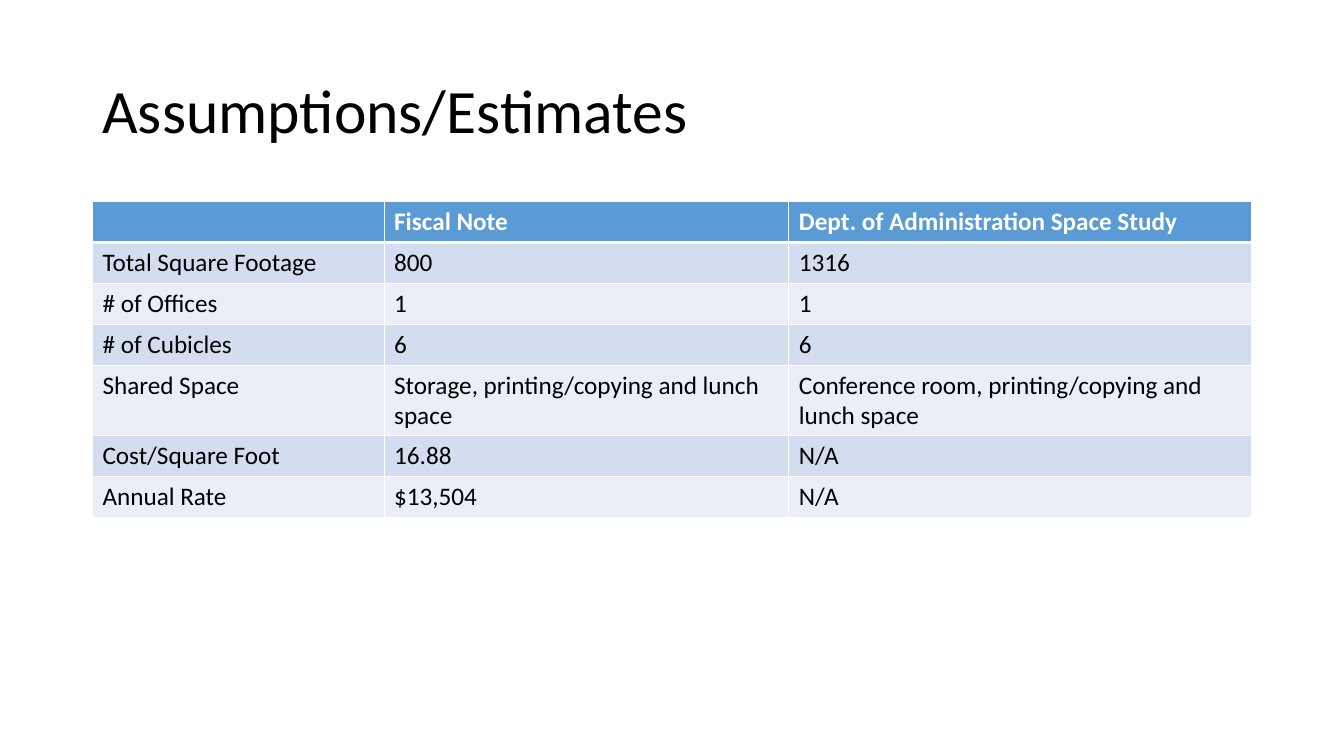
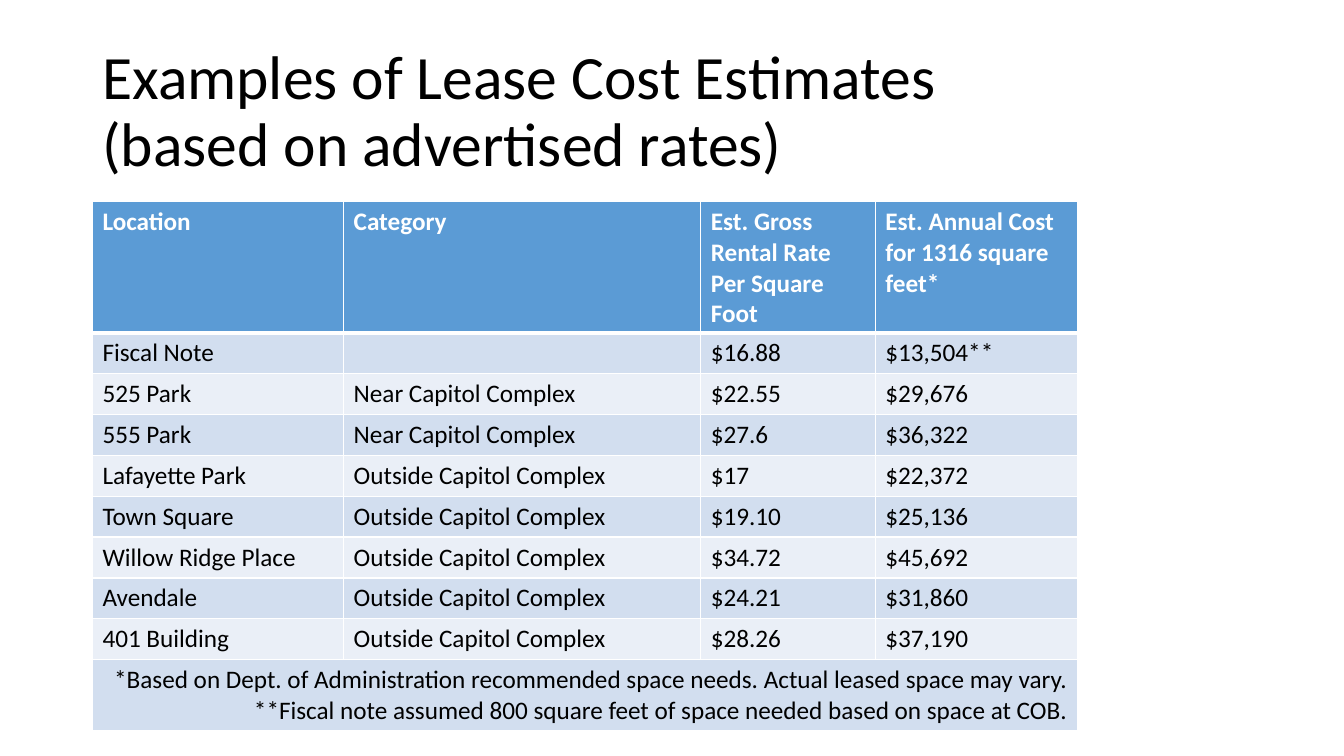
from lxml.etree import SubElement as Sub
from pptx import Presentation
from pptx.dml.color import RGBColor as RGB
from pptx.enum.text import MSO_ANCHOR as Anchor, PP_ALIGN as Align
from pptx.oxml.ns import qn
from pptx.util import Cm, Pt

COLORS = {"text": "000000", "white": "FFFFFF", "head": "5B9BD5",
          "odd": "D2DEEF", "even": "EAEFF7"}
FONTS = {
    "title": {"name": "Calibri", "size": Pt(44), "bold": False},
    "head": {"name": "Calibri", "size": Pt(18), "bold": True},
    "body": {"name": "Calibri", "size": Pt(18), "bold": False},
}
LEFT, TOP, WIDTH, ROW = 2.33, 5.08, 29.21, 1.03


class Deck:
    """Holds the shared style and the current slide."""

    def __init__(self):
        self.prs = Presentation()
        self.prs.slide_width, self.prs.slide_height = Cm(33.87), Cm(19.05)
        self.slide = None

    def label(self, frame, text, style, color, align=Align.LEFT):
        frame.text = text
        for para in frame.paragraphs:
            para.alignment = align
            for run in para.runs:
                for key, value in FONTS[style].items():
                    setattr(run.font, key, value)
                run.font.color.rgb = RGB.from_string(COLORS[color])

    def page(self, title):
        self.slide = self.prs.slides.add_slide(self.prs.slide_layouts[6])
        box = self.slide.shapes.add_textbox(Cm(LEFT), Cm(1.01), Cm(WIDTH), Cm(3.68))
        frame = box.text_frame
        frame.word_wrap = True
        frame.vertical_anchor = Anchor.MIDDLE
        self.label(frame, title, "title", "text")
        for para in frame.paragraphs:
            para.line_spacing = 0.9

    def border(self, cell, row):
        props = cell._tc.get_or_add_tcPr()
        widths = {"L": 1, "R": 1, "T": 3 if row == 1 else 1, "B": 3 if row == 0 else 1}
        for side, width in widths.items():
            line = Sub(props, qn(f"a:ln{side}"), w=str(Pt(width)))
            fill = Sub(line, qn("a:solidFill"))
            Sub(fill, qn("a:srgbClr"), val=COLORS["white"])

    def table(self, widths, rows, note=None):
        count = len(rows) + bool(note)
        grid = self.slide.shapes.add_table(
            count, len(widths), Cm(LEFT), Cm(TOP), Cm(sum(widths)), Cm(ROW * count)).table
        grid.horz_banding = False
        for col, width in zip(grid.columns, widths):
            col.width = Cm(width)
        for i, row in enumerate(grid.rows):
            row.height = Cm(ROW)
            band = "head" if i == 0 else "odd" if i % 2 else "even"
            for cell in row.cells:
                self.border(cell, i)
                cell.fill.solid()
                cell.fill.fore_color.rgb = RGB.from_string(COLORS[band])
        for i, texts in enumerate(rows):
            style, color = ("body", "text") if i else ("head", "white")
            for j, text in enumerate(texts):
                self.label(grid.cell(i, j).text_frame, text, style, color)
        if note:
            last = grid.cell(count - 1, 0)
            last.merge(grid.cell(count - 1, len(widths) - 1))
            self.label(last.text_frame, note, "body", "text", Align.RIGHT)


def main():
    deck = Deck()
    deck.page("Assumptions/Estimates")
    deck.table([7.35, 10.2, 11.66], [
        ("", "Fiscal Note", "Dept. of Administration Space Study"),
        ("Total Square Footage", "800", "1316"),
        ("# of Offices", "1", "1"),
        ("# of Cubicles", "6", "6"),
        ("Shared Space", "Storage, printing/copying and lunch space",
         "Conference room, printing/copying and lunch space"),
        ("Cost/Square Foot", "16.88", "N/A"),
        ("Annual Rate", "$13,504", "N/A"),
    ])

    near, far = "Near Capitol Complex", "Outside Capitol Complex"
    deck.page("Examples of Lease Cost Estimates\v(based on advertised rates)")
    deck.table([6.33, 9.0, 4.4, 5.1], [
        ("Location", "Category", "Est. Gross Rental Rate Per Square Foot",
         "Est. Annual Cost for 1316 square feet*"),
        ("Fiscal Note", "", "$16.88", "$13,504**"),
        ("525 Park", near, "$22.55", "$29,676"),
        ("555 Park", near, "$27.6", "$36,322"),
        ("Lafayette Park", far, "$17", "$22,372"),
        ("Town Square", far, "$19.10", "$25,136"),
        ("Willow Ridge Place", far, "$34.72", "$45,692"),
        ("Avendale", far, "$24.21", "$31,860"),
        ("401 Building", far, "$28.26", "$37,190"),
    ], "*Based on Dept. of Administration recommended space needs. "
       "Actual leased space may vary.\n"
       "**Fiscal note assumed 800 square feet of space needed based on space at COB.")
    deck.prs.save("out.pptx")


if __name__ == "__main__":
    main()
